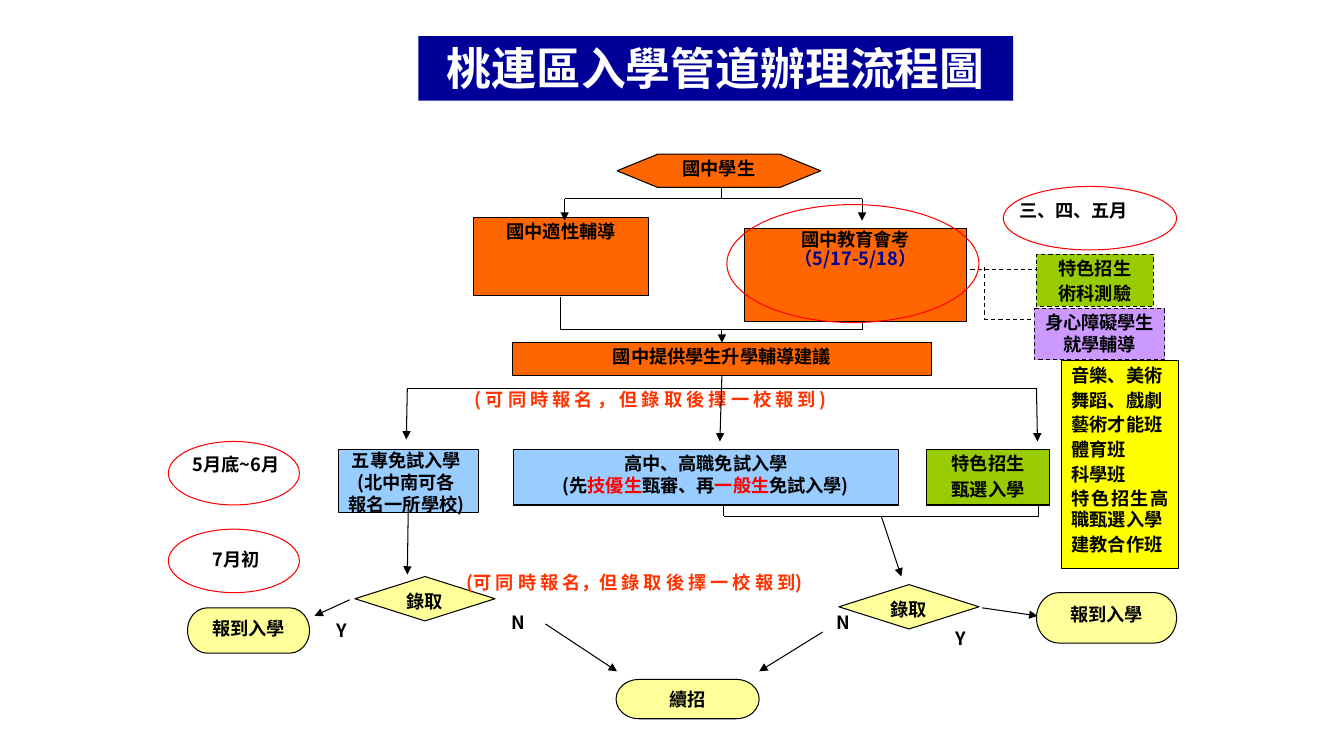
from lxml import etree
from pptx import Presentation
from pptx import util as u
from pptx.dml.color import RGBColor
from pptx.enum import dml, shapes, text
from pptx.oxml import ns

INCH = 2.54
FONT = "Noto Sans CJK SC"
BLACK, RED, NOTE = "000000", "FF0000", "FF3300"
ORANGE, BLUE, GREEN, PALE = "FF6600", "99CCFF", "99CC00", "FFFF99"
KIND = shapes.MSO_SHAPE
RECT, PROC, OVAL = KIND.RECTANGLE, KIND.FLOWCHART_PROCESS, KIND.OVAL
TERM, DIAMOND = KIND.FLOWCHART_TERMINATOR, KIND.FLOWCHART_DECISION
MID, LEFT, EVEN = text.PP_ALIGN.CENTER, text.PP_ALIGN.LEFT, text.PP_ALIGN.JUSTIFY
TIGHT = (0.06, 0.03, 0.06, 0.03)
SLIM = (0.01, 0.03, 0.01, 0.03)
WIDE = (0.1, 0.05, 0.1, 0.05)


def size(inches):
    return u.Cm(inches * INCH)


def color(code):
    return RGBColor.from_string(code)


def place(base, box):
    """Turn a box relative to its region into slide lengths."""
    x, y, w, h = box
    return [size(v) for v in (base[0] + x, base[1] + y, w, h)]


def stroke(line, code, dash=False):
    line.color.rgb = color(code)
    line.width = u.Pt(0.75)
    if dash:
        line.dash_style = dml.MSO_LINE.DASH


def write(shape, rows, ink=BLACK, align=MID, pad=TIGHT, gap=2.6, lead=None, pt=13, face=FONT):
    """Each row is a string or a list of (string, colour) runs."""
    frame = shape.text_frame
    frame.word_wrap = True
    frame.vertical_anchor = text.MSO_ANCHOR.TOP
    frame.margin_left, frame.margin_top, frame.margin_right, frame.margin_bottom = map(size, pad)
    for i, row in enumerate(rows):
        para = frame.add_paragraph() if i else frame.paragraphs[0]
        para.alignment = align
        para.space_before = u.Pt(gap if i else 0)
        if lead:
            para.line_spacing = lead
        for words, tint in [(row, ink)] if isinstance(row, str) else row:
            run = para.add_run()
            run.text = words
            run.font.size, run.font.name, run.font.bold = u.Pt(pt), face, True
            run.font.color.rgb = color(tint)


def node(slide, base, kind, box, fill=None, rows=(), edge=BLACK, dash=False, **style):
    shape = slide.shapes.add_shape(kind, *place(base, box))
    shape.shadow.inherit = False
    if fill:
        shape.fill.solid()
        shape.fill.fore_color.rgb = color(fill)
    else:
        shape.fill.background()
    if edge:
        stroke(shape.line, edge, dash)
    else:
        shape.line.fill.background()
    if rows:
        write(shape, rows, **style)


def label(slide, base, box, words, **style):
    write(slide.shapes.add_textbox(*place(base, box)), [words], **style)


def link(slide, base, *points, head=False, dash=False):
    """Join the points with straight lines; head puts an arrow at the last."""
    spots = [(size(base[0] + x), size(base[1] + y)) for x, y in points]
    for start, end in zip(spots, spots[1:]):
        wire = slide.shapes.add_connector(shapes.MSO_CONNECTOR.STRAIGHT, *start, *end)
        stroke(wire.line, BLACK, dash)
        etree.SubElement(wire._element.spPr, ns.qn("a:effectLst"))
    if head:
        etree.SubElement(wire.line._get_or_add_ln(), ns.qn("a:tailEnd"), type="triangle")


def title(slide, base, w, h):
    node(slide, base, RECT, (0, 0, w, h), "000099", ["桃連區入學管道辦理流程圖"],
         edge=None, ink="FFFFFF", pad=WIDE, pt=32, face="Calibri")


def prepare(slide, base):
    # Students split into guidance and exam
    node(slide, base, KIND.FLOWCHART_PREPARATION, (1.42, 0, 2.02, 0.33), ORANGE, ["國中學生"])
    link(slide, base, (2.46, 0.33), (2.46, 0.44))
    node(slide, base, PROC, (0, 0.63, 1.73, 0.77), ORANGE, ["國中適性輔導"])
    for x in (0.9, 3.85):
        link(slide, base, (2.46, 0.44), (x, 0.44), (x, 0.66), head=True)
    link(slide, base, (3.85, 1.14), (5.58, 1.14), dash=True)
    node(slide, base, PROC, (2.68, 0.74, 2.21, 0.92), ORANGE,
         ["國中教育會考", [("（5/17-5/18）", "000099")]], gap=0, lead=0.85)
    # Both lead to advice
    link(slide, base, (0.86, 1.42), (0.86, 1.74), (3.85, 1.74), (3.85, 1.65))
    link(slide, base, (2.46, 1.74), (2.46, 1.87), head=True)
    node(slide, base, PROC, (0.38, 1.87, 4.16, 0.33), ORANGE, ["國中提供學生升學輔導建議"])
    node(slide, base, OVAL, (2.51, 0.5, 2.5, 1.17), edge=RED)


def special(slide, base):
    # Side tests and the classes they serve
    node(slide, base, RECT, (0.53, 0.67, 1.16, 0.52), GREEN, ["特色招生", "術科測驗"],
         dash=True, pad=SLIM)
    link(slide, base, (0.01, 0.8), (0.01, 1.32), (0.48, 1.32), dash=True)
    node(slide, base, PROC, (0.51, 1.21, 1.29, 0.51), "CC99FF", ["身心障礙學生就學輔導"], dash=True)
    node(slide, base, RECT, (0.78, 1.73, 1.16, 2.06), "FFFF00",
         ["音樂、美術", "舞蹈、戲劇", "藝術才能班", "體育班", "科學班",
          "特色招生高職甄選入學", "建教合作班"], align=EVEN, pad=WIDE, lead=0.96)
    label(slide, base, (0.26, 0.08, 1.65, 0.32), "三、四、五月", align=LEFT, pad=WIDE)
    node(slide, base, OVAL, (0.2, 0, 1.72, 0.63), edge=RED)


def routes(slide, base):
    # Three ways in
    label(slide, base, (1.34, 0.09, 5.67, 0.33), "( 可 同 時 報 名 ， 但 錄 取 後 擇 一 校 報 到 )",
          ink=NOTE, align=LEFT, pad=SLIM)
    link(slide, base, (0.68, 0.12), (6.92, 0.12))
    for start, end in [((0.68, 0.12), (0.67, 0.63)), ((3.8, 0), (3.78, 0.65)),
                       ((6.92, 0.12), (6.93, 0.65))]:
        link(slide, base, start, end, head=True)
    node(slide, base, PROC, (0, 0.73, 1.39, 0.62), BLUE,
         ["五專免試入學", "(北中南可各", "報名一所學校)"], pad=(0.01, 0.03, 0.06, 0.03), lead=0.85)
    node(slide, base, PROC, (1.73, 0.73, 3.82, 0.55), BLUE,
         ["高中、高職免試入學",
          [("(先", BLACK), ("技優生", RED), ("甄審、再", BLACK), ("一般生", RED),
           ("免試入學)", BLACK)]], gap=0)
    node(slide, base, PROC, (5.83, 0.73, 1.22, 0.55), GREEN, ["特色招生", "甄選入學"])
    # Down to admission
    link(slide, base, (0.69, 1.28), (0.68, 1.97), head=True)
    link(slide, base, (3.82, 1.28), (3.82, 1.39), (6.94, 1.39), (6.94, 1.28))
    link(slide, base, (5.38, 1.39), (5.58, 1.99), head=True)


def results(slide, base):
    # Decisions and outcomes
    for kind, box, words in [(TERM, (0, 0.39, 1.21, 0.45), "報到入學"),
                             (DIAMOND, (1.66, 0.08, 1.39, 0.44), "錄取"),
                             (DIAMOND, (6.46, 0.16, 1.39, 0.44), "錄取"),
                             (TERM, (8.42, 0.24, 1.39, 0.5), "報到入學"),
                             (TERM, (4.25, 1.1, 1.42, 0.39), "續招")]:
        node(slide, base, kind, box, PALE, [words])
    label(slide, base, (2.76, 0, 4.51, 0.22), "(可 同 時 報 名，但 錄 取 後 擇 一 校 報 到)",
          ink=NOTE, align=LEFT, pad=SLIM)
    # Yes and no branches
    for mark, spot, start, end in [("Y", (1.42, 0.47), (1.61, 0.31), (1.26, 0.47)),
                                   ("N", (3.15, 0.39), (3.55, 0.55), (4.26, 1.02)),
                                   ("N", (6.38, 0.39), (6.3, 0.63), (5.67, 1.02)),
                                   ("Y", (7.56, 0.55), (7.88, 0.39), (8.43, 0.47))]:
        label(slide, base, (*spot, 0.35, 0.22), mark, align=LEFT)
        link(slide, base, start, end, head=True)


def dates(slide, base):
    for words, top, drop in [("5月底~6月", 0, 0.09), ("7月初", 0.87, 0.16)]:
        label(slide, base, (0, top + drop, 1.34, 0.4), words)
        node(slide, base, OVAL, (0, top, 1.3, 0.63), edge=RED)


def main():
    deck = Presentation()
    deck.slide_width, deck.slide_height = size(13.33), size(7.5)
    slide = deck.slides.add_slide(deck.slide_layouts[6])
    title(slide, (4.15, 0.36), 5.9, 0.64)
    prepare(slide, (4.7, 1.53))
    special(slide, (9.75, 1.85))
    routes(slide, (3.36, 3.73))
    results(slide, (1.86, 5.64))
    dates(slide, (1.67, 4.38))
    deck.save("out.pptx")


if __name__ == "__main__":
    main()
